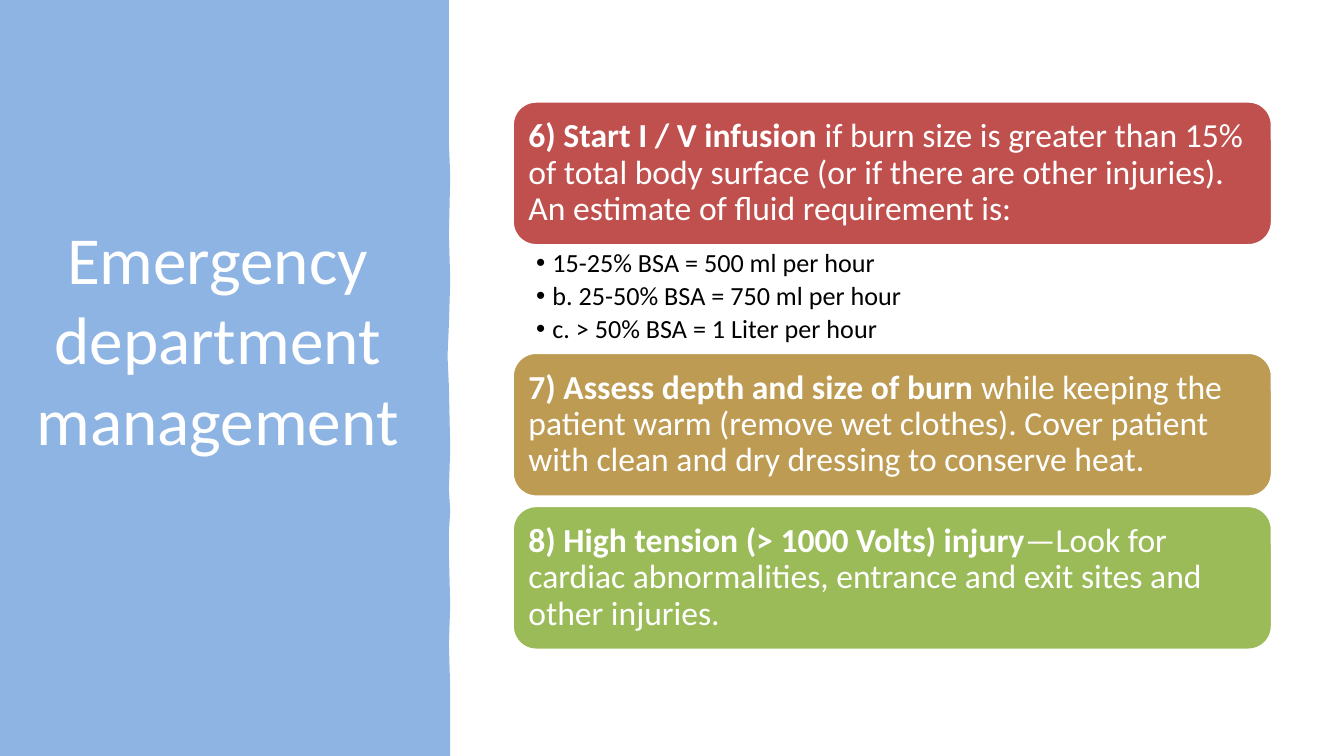
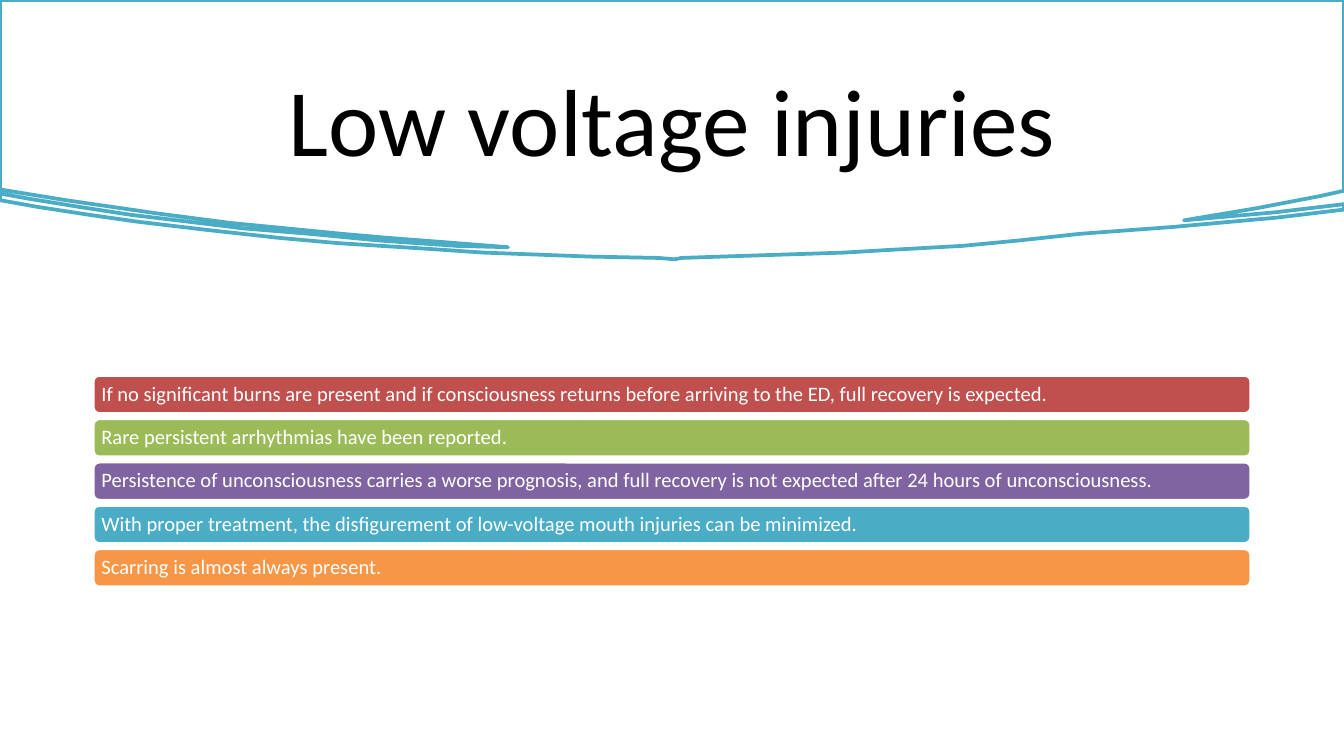
from lxml.etree import SubElement
from pptx import Presentation
from pptx.dml.color import RGBColor
from pptx.enum.shapes import MSO_SHAPE as Shape
from pptx.enum.text import MSO_ANCHOR as Anchor, PP_ALIGN as Align
from pptx.oxml.ns import qn
from pptx.util import Pt

PX = 9144  # 100 px to the inch
SLIDE_W = 1000
SLIDE_H = SLIDE_W * 9 / 16
FONT = "Calibri"
WHITE, BLACK = "FFFFFF", "000000"
BLUE, RED, GOLD, GREEN = "8EB4E3", "C0504D", "BD9B53", "9BBB59"
PURPLE, TEAL, ORANGE = "8064A2", "4BACC6", "F79646"

# Content: slide 1
EMERGENCY_TITLE = "Emergency department management"
STEPS = [  # colour, bold lead, rest, doses
    (RED, "6) Start I / V infusion ",
     "if burn size is greater than 15% of total body surface (or if there are "
     "other injuries). An estimate of fluid requirement is:",
     ["15-25% BSA = 500 ml per hour",
      "b. 25-50% BSA = 750 ml per hour",
      "c. > 50% BSA = 1 Liter per hour"]),
    (GOLD, "7) Assess depth and size of burn ",
     "while keeping the patient warm (remove wet clothes). Cover patient with "
     "clean and dry dressing to conserve heat.", []),
    (GREEN, "8) High tension (> 1000 Volts) injury",
     "—Look for cardiac abnormalities, entrance and exit sites and other injuries.", []),
]
PANEL_EDGE = [
    (0, 0), (334, 0), (334, 47), (334, 76), (334, 106), (335, 131), (334, 175),
    (335, 208), (334, 242), (333, 265), (334, 287), (335, 334), (334, 364),
    (335, 380), (334, 396), (334, 412), (335, 450), (334, 479), (335, 513),
    (335, 550), (335, SLIDE_H), (0, SLIDE_H),
]

# Content: slide 2
VOLTAGE_TITLE = "Low voltage injuries"
OUTCOMES = [
    (RED, "If no significant burns are present and if consciousness returns "
          "before arriving to the ED, full recovery is expected."),
    (GREEN, "Rare persistent arrhythmias have been reported."),
    (PURPLE, "Persistence of unconsciousness carries a worse prognosis, and full "
             "recovery is not expected after 24 hours of unconsciousness."),
    (TEAL, "With proper treatment, the disfigurement of low-voltage mouth "
           "injuries can be minimized."),
    (ORANGE, "Scarring is almost always present."),
]
BRUSH_EDGE = [
    # right end, with its split stroke
    (0, 0), (1000, 0), (1000, 142), (982, 146), (935, 155), (881, 164),
    (949, 158), (1000, 152), (1000, 156), (950, 162),
    # lower stroke, right to left
    (872, 169), (804, 174), (758, 179), (716, 183), (662, 186), (628, 188),
    (536, 191), (507, 192), (502, 193), (490, 192), (440, 191), (360, 188),
    (315, 185), (252, 181), (207, 177), (153, 171), (102, 165), (67, 160),
    (28, 154), (0, 149), (0, 144),
    # middle stroke, left to right
    (22, 148), (59, 154), (98, 160), (140, 165), (181, 170), (230, 174),
    (282, 179), (340, 183), (378, 184),
    # upper stroke, back to the left
    (327, 180), (288, 177), (254, 174), (213, 170), (172, 166), (118, 159),
    (49, 149), (0, 141),
]


def rgb(color):
    return RGBColor.from_string(color)


def apply(target, values):
    for name, value in values.items():
        setattr(target, name, value)


def paint(shape, fill, line=None):
    shape.shadow.inherit = False
    shape.fill.solid()
    shape.fill.fore_color.rgb = rgb(fill)
    if line:
        shape.line.color.rgb = rgb(line)
        shape.line.width = Pt(2)
    else:
        shape.line.fill.background()


def outline(slide, points, fill, line=None):
    builder = slide.shapes.build_freeform(
        *(n * PX for n in points[0]), scale=1)
    builder.add_line_segments([(round(x * PX), round(y * PX)) for x, y in points[1:]])
    paint(builder.convert_to_shape(), fill, line)


def set_frame(frame, insets, anchor=Anchor.MIDDLE):
    left, top, right, bottom = (inset * PX for inset in insets)
    apply(frame, dict(word_wrap=True, vertical_anchor=anchor, margin_left=left,
                      margin_top=top, margin_right=right, margin_bottom=bottom))


def write(paragraph, runs, size, color, **layout):
    apply(paragraph, layout)
    for text, bold in runs:
        run = paragraph.add_run()
        run.text = text
        apply(run.font, dict(name=FONT, size=Pt(size), bold=bold))
        run.font.color.rgb = rgb(color)


def add_text_box(slide, box):
    return slide.shapes.add_textbox(*(n * PX for n in box)).text_frame


def add_title(slide, text, box, size, color, insets=(10, 5, 10, 5)):
    frame = add_text_box(slide, box)
    set_frame(frame, insets)
    write(frame.paragraphs[0], [(text, False)], size, color, alignment=Align.CENTER)


def add_card(slide, box, fill, runs, size, inset):
    card = slide.shapes.add_shape(Shape.ROUNDED_RECTANGLE, *(round(n * PX) for n in box))
    paint(card, fill, WHITE)
    set_frame(card.text_frame, [inset] * 4)
    write(card.text_frame.paragraphs[0], runs, size, WHITE,
          alignment=Align.LEFT, line_spacing=0.9)


def add_doses(slide, box, doses):
    frame = add_text_box(slide, box)
    set_frame(frame, (18, 3, 14, 3), Anchor.TOP)
    for i, dose in enumerate(doses):
        paragraph = frame.add_paragraph() if i else frame.paragraphs[0]
        props = paragraph._p.get_or_add_pPr()
        props.set("marL", str(12 * PX))
        props.set("indent", str(-12 * PX))
        SubElement(props, qn("a:buFont"), typeface="Arial")
        SubElement(props, qn("a:buChar"), char="•")
        write(paragraph, [(dose, False)], 14, BLACK,
              level=1, line_spacing=0.9, space_after=Pt(2.5))


def build_emergency(slide):
    outline(slide, PANEL_EDGE, BLUE)
    # The deep bottom inset lifts the title above the middle
    add_title(slide, EMERGENCY_TITLE, (17, 53, 290, 458), 36, WHITE, (10, 5, 10, 66))
    left, top, width, height, doses_height, gap = 381, 75, 566, 108, 79, 6
    for fill, lead, rest, doses in STEPS:
        add_card(slide, (left, top, width, height), fill,
                 [(lead, True), (rest, False)], 18, 7)
        top += height
        if doses:
            add_doses(slide, (left, top, width, doses_height), doses)
        top += doses_height if doses else gap


def build_voltage(slide):
    outline(slide, BRUSH_EDGE, WHITE, TEAL)
    left, width = 69, 862
    add_title(slide, VOLTAGE_TITLE, (left, 33, width, 111), 51, BLACK)
    first, last, height = 279, 408, 29
    pitch = (last - first) / (len(OUTCOMES) - 1)
    for i, (fill, text) in enumerate(OUTCOMES):
        add_card(slide, (left, first + i * pitch, width, height), fill,
                 [(text, False)], 11, 5)


def main():
    deck = Presentation()
    apply(deck, dict(slide_width=SLIDE_W * PX, slide_height=round(SLIDE_H * PX)))
    for build in (build_emergency, build_voltage):
        build(deck.slides.add_slide(deck.slide_layouts[6]))
    deck.save("out.pptx")


if __name__ == "__main__":
    main()
